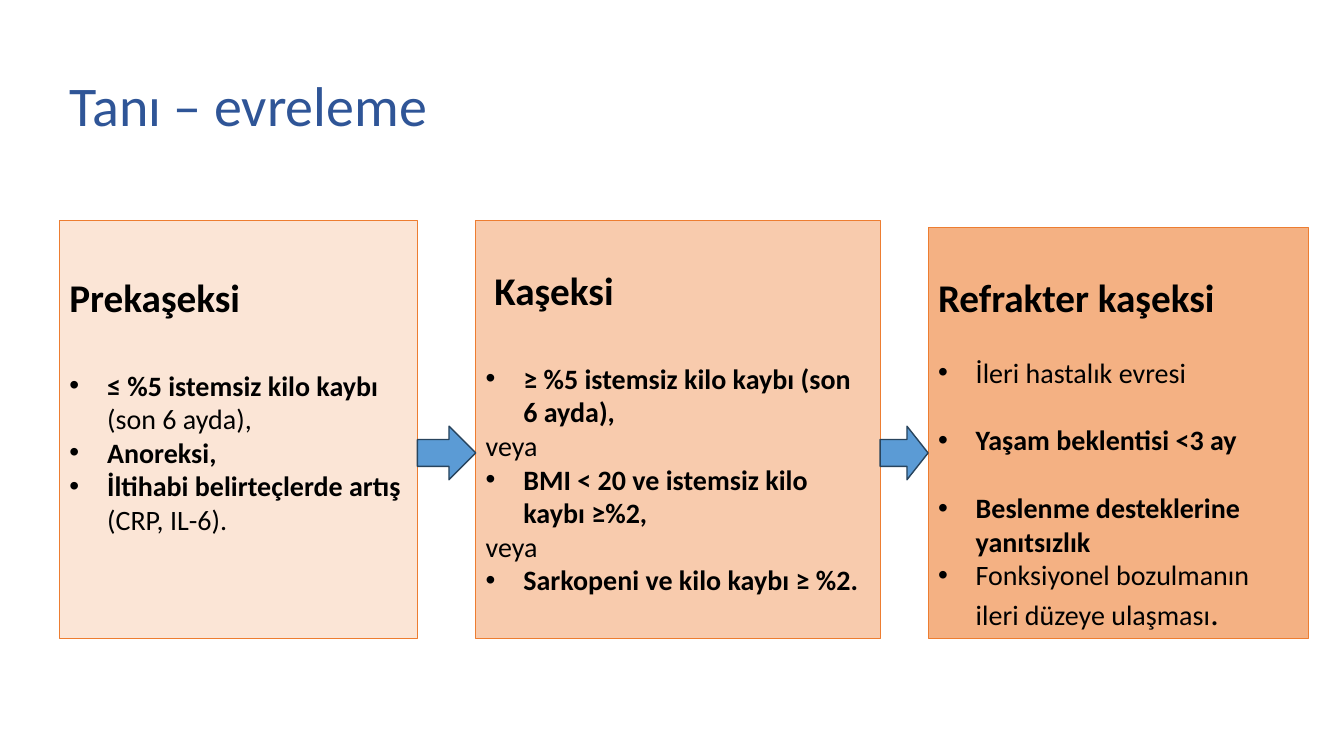
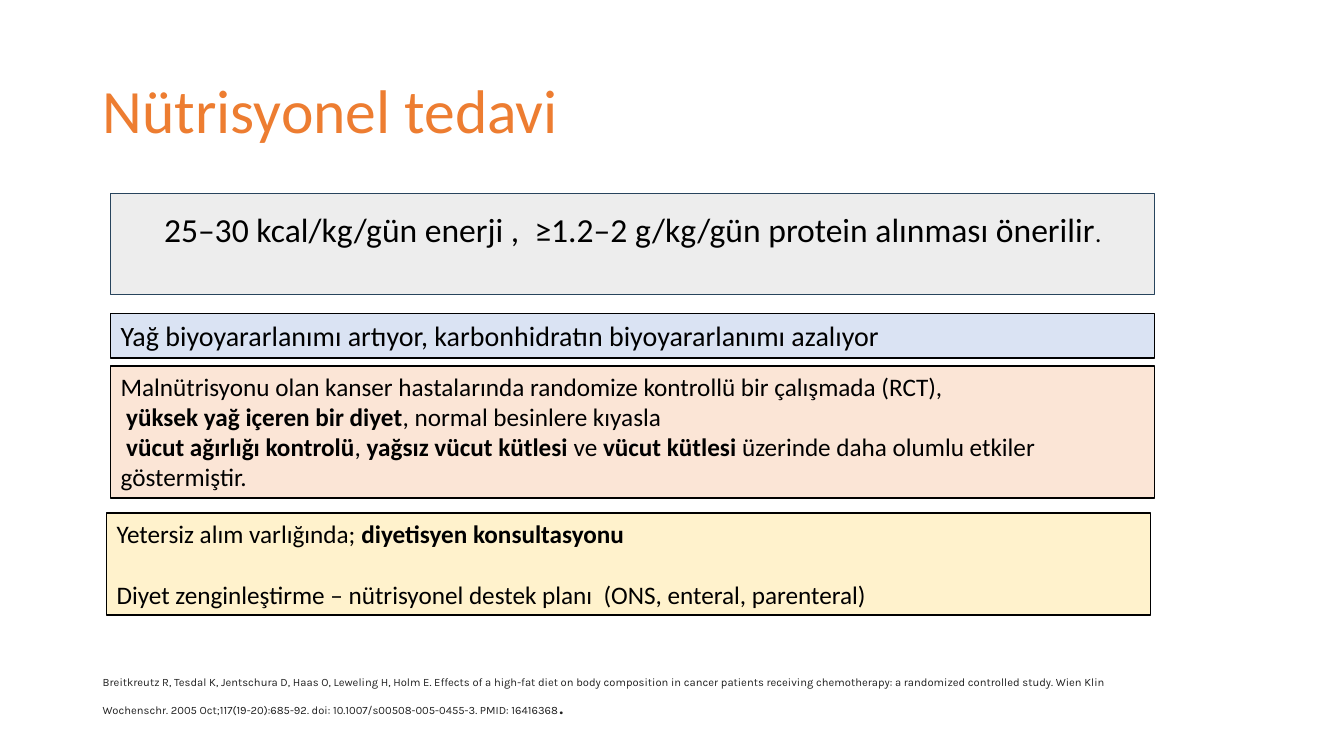
from dataclasses import dataclass

from lxml.etree import SubElement
from pptx import Presentation
from pptx.dml.color import RGBColor
from pptx.enum.shapes import MSO_SHAPE
from pptx.enum.text import MSO_ANCHOR, PP_ALIGN
from pptx.oxml.ns import qn
from pptx.util import Cm, Pt


class Theme:
    font = "Calibri"
    source_font = "Karla"
    black = "000000"
    blue = "2F5597"
    orange = "ED7D31"
    source_ink = "212121"
    arrow = "5B9BD5"
    navy = "28445D"
    stages = ["FBE5D6", "F8CBAD", "F4B183"]
    grey, pale_blue, peach, cream = "EDEDED", "DAE3F3", "FBE5D6", "FFF2CC"
    heading, lead, body, note, source = 28, 24, 20, 18, 8


@dataclass
class Line:
    spans: list
    size: float = Theme.body
    before: float = 0
    bullet: bool = False
    indent: float = 0
    align: PP_ALIGN = PP_ALIGN.LEFT
    spacing: float = 1.0


def write(box, lines, color=Theme.black, font=Theme.font, anchor=MSO_ANCHOR.TOP, top=0.13, bottom=0.13):
    frame = box.text_frame
    frame.word_wrap = True
    frame.vertical_anchor = anchor
    frame.margin_top, frame.margin_bottom = Cm(top), Cm(bottom)
    for index, line in enumerate(lines):
        para = frame.add_paragraph() if index else frame.paragraphs[0]
        para.alignment = line.align
        para.line_spacing = line.spacing
        para.space_before = Pt(line.before)
        properties = para._p.get_or_add_pPr()
        if line.bullet:
            properties.set("marL", str(Cm(0.95)))
            properties.set("indent", str(-Cm(0.95)))
            SubElement(properties, qn("a:buFont"), typeface="Arial")
            SubElement(properties, qn("a:buChar"), char="•")
        elif line.indent:
            properties.set("indent", str(Cm(line.indent)))
        for text, bold, *size in line.spans:
            span = para.add_run()
            span.text = text
            span.font.name = font
            span.font.size = Pt(size[0] if size else line.size)
            span.font.bold = bold
            span.font.color.rgb = RGBColor.from_string(color)


def add_panel(page, kind, place, fill, outline, width=1.0):
    panel = page.shapes.add_shape(kind, *map(Cm, place))
    panel.shadow.inherit = False
    panel.fill.solid()
    panel.fill.fore_color.rgb = RGBColor.from_string(fill)
    panel.line.color.rgb = RGBColor.from_string(outline)
    panel.line.width = Pt(width)
    return panel


deck = Presentation()
deck.slide_width, deck.slide_height = Cm(33.87), Cm(19.05)
titles = [
    ("Tanı – evreleme", 1.5, 0.89, 40, Theme.blue),
    ("Nütrisyonel tedavi", 2.34, 1.02, 44, Theme.orange),
]
pages = []
for text, left, top, size, color in titles:
    page = deck.slides.add_slide(deck.slide_layouts[6])
    box = page.shapes.add_textbox(Cm(left), Cm(top), Cm(29.21), Cm(3.68))
    write(box, [Line([(text, False)], size, spacing=0.9)], color, anchor=MSO_ANCHOR.MIDDLE)
    pages.append(page)
staging, therapy = pages

stages = [
    (1.5, 5.56, 9.02, 1.33, [
        Line([("Prekaşeksi", True)], Theme.heading),
        Line([("≤ %5 istemsiz kilo kaybı ", True), ("(son 6 ayda),", False)], before=34, bullet=True),
        Line([("Anoreksi,", True)], bullet=True),
        Line([("İltihabi belirteçlerde artış", True), (" (CRP, IL-6).", False)], bullet=True),
    ]),
    (11.99, 5.56, 10.19, 1.16, [
        Line([("Kaşeksi", True)], Theme.heading, indent=0.22),
        Line([("≥ %5 istemsiz kilo kaybı (son 6 ayda),", True)], before=34, bullet=True),
        Line([("veya", False)]),
        Line([("BMI < 20 ve istemsiz kilo kaybı ≥%2,", True)], bullet=True),
        Line([("veya", False)]),
        Line([("Sarkopeni ve kilo kaybı ≥ %2.", True)], bullet=True),
    ]),
    (23.39, 5.74, 9.58, 1.16, [
        Line([("Refrakter kaşeksi", True)], Theme.heading),
        Line([("İleri hastalık evresi", False)], before=24.4, bullet=True),
        Line([("Yaşam beklentisi <3 ay", True)], before=24.4, bullet=True),
        Line([("Beslenme desteklerine yanıtsızlık", True)], before=24.4, bullet=True),
        Line([("Fonksiyonel bozulmanın ileri düzeye ulaşması", False), (".", False, Theme.lead)], bullet=True),
    ]),
]
stage_bottom = 16.08
for (left, top, width, inset, lines), fill in zip(stages, Theme.stages):
    place = (left, top, width, stage_bottom - top)
    box = add_panel(staging, MSO_SHAPE.RECTANGLE, place, fill, Theme.orange, 0.5)
    write(box, lines, top=inset)

for before, after, head in zip(stages, stages[1:], (0.5, 0.44)):
    start = before[0] + before[2]
    place = (start, 10.74, after[0] - start, 1.35)
    arrow = add_panel(staging, MSO_SHAPE.RIGHT_ARROW, place, Theme.arrow, Theme.navy)
    arrow.adjustments[1] = head

energy = add_panel(therapy, MSO_SHAPE.RECTANGLE, (2.79, 4.88, 26.31, 2.54), Theme.grey, Theme.navy)
write(energy, [
    Line([
        ("25–30 kcal/kg/gün enerji ,  ≥1.2–2 g/kg/gün protein alınması önerilir", False),
        (".", False, Theme.note),
    ], Theme.lead, align=PP_ALIGN.CENTER),
], anchor=MSO_ANCHOR.MIDDLE, bottom=0.9)

advice = [
    (2.79, 7.9, 1.12, Theme.pale_blue, [
        Line([("Yağ biyoyararlanımı artıyor, karbonhidratın biyoyararlanımı azalıyor", False)]),
    ]),
    (2.79, 9.22, 3.33, Theme.peach, [
        Line([("Malnütrisyonu olan kanser hastalarında randomize kontrollü bir çalışmada (RCT),", False)], Theme.note),
        Line([
            ("yüksek yağ içeren bir diyet", True),
            (", normal besinlere kıyasla", False),
        ], Theme.note, indent=0.14),
        Line([
            ("vücut ağırlığı kontrolü", True),
            (", ", False),
            ("yağsız vücut kütlesi", True),
            (" ve ", False),
            ("vücut kütlesi", True),
            (" üzerinde daha olumlu etkiler göstermiştir.", False),
        ], Theme.note, indent=0.14),
    ]),
    (2.69, 12.93, 2.57, Theme.cream, [
        Line([("Yetersiz alım varlığında; ", False), ("diyetisyen konsultasyonu", True)], Theme.note),
        Line([
            ("Diyet zenginleştirme – nütrisyonel destek planı  (ONS, enteral, parenteral)", False),
        ], Theme.note, before=22),
    ]),
]
for left, top, height, fill, lines in advice:
    box = add_panel(therapy, MSO_SHAPE.RECTANGLE, (left, top, 26.31, height), fill, Theme.black)
    write(box, lines)

citation = therapy.shapes.add_textbox(Cm(2.34), Cm(16.89), Cm(27.08), Cm(2.13))
write(citation, [
    Line([
        ("Breitkreutz R, Tesdal K, Jentschura D, Haas O, Leweling H, Holm E. "
         "Effects of a high-fat diet on body composition in cancer patients receiving chemotherapy: "
         "a randomized controlled study. Wien Klin Wochenschr. 2005 Oct;117(19-20):685-92. "
         "doi: 10.1007/s00508-005-0455-3. PMID: 16416368", False),
        (".", False, Theme.note),
    ], Theme.source),
], Theme.source_ink, Theme.source_font)

deck.save("out.pptx")
